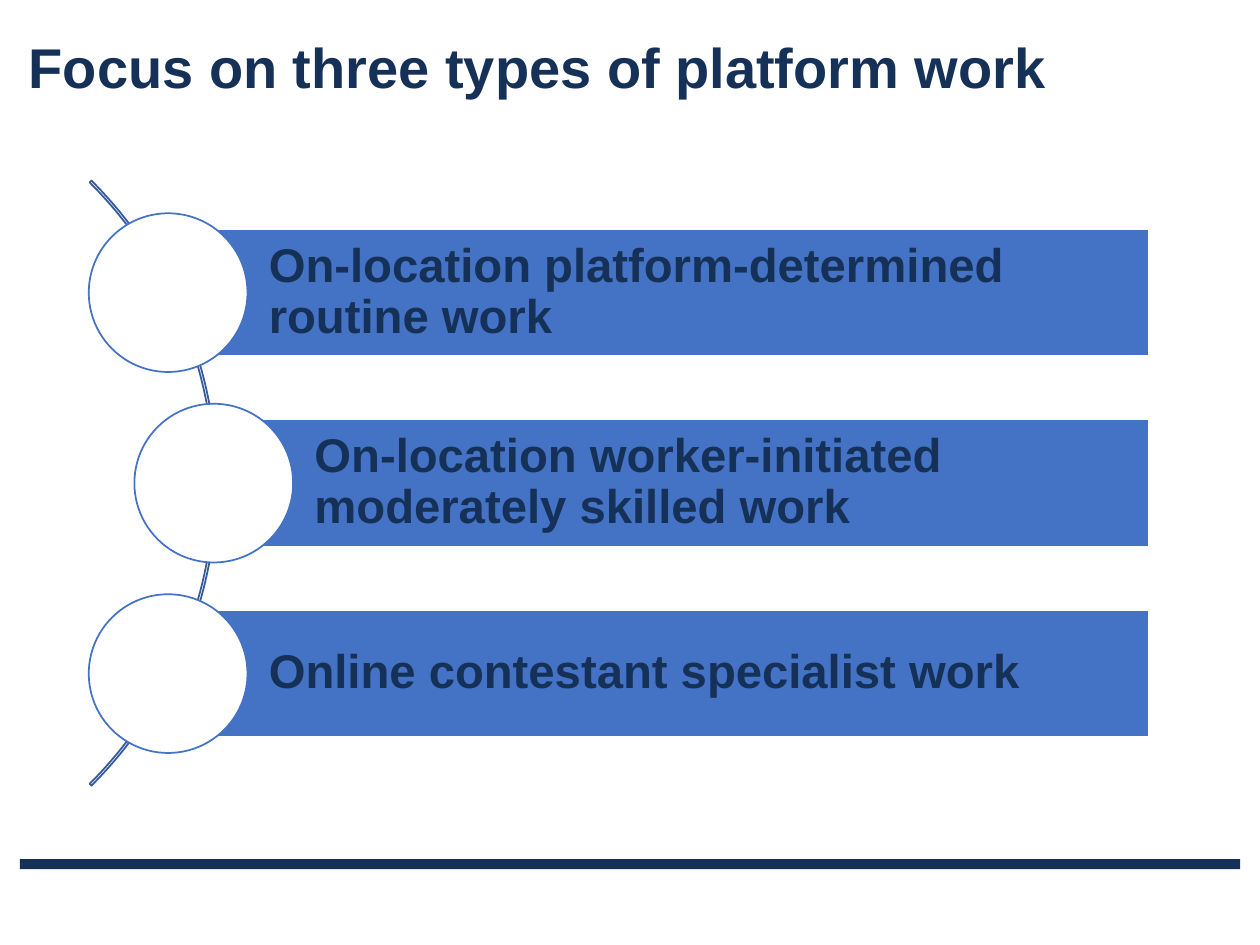
import pptx
import pptx.util
import pptx.dml.color
import pptx.enum.shapes
import pptx.enum.text

Cm = pptx.util.Cm
Pt = pptx.util.Pt
SHAPE = pptx.enum.shapes.MSO_SHAPE
ANCHOR = pptx.enum.text.MSO_ANCHOR

TITLE = "Focus on three types of platform work"
WORK_TYPES = [
    ("On-location platform-determined routine work", 3.39),
    ("On-location worker-initiated moderately skilled work", 4.31),
    ("Online contestant specialist work", 3.39),
]
COLORS = {"navy": "163157", "blue": "4472C4", "arc": "365B9D", "white": "FFFFFF"}

MIDDLE_Y, PITCH = 9.74, 3.84
BAR_RIGHT, BAR_HEIGHT = 23.17, 2.56
CIRCLE = 3.2
ARC_LEFT, ARC_SIZE = -12.88, 17.25


def rgb(name):
    return pptx.dml.color.RGBColor.from_string(COLORS[name])


def add_shape(kind, left, top, width, height, fill=None, line=None):
    sp = slide.shapes.add_shape(kind, Cm(left), Cm(top), Cm(width), Cm(height))
    sp.shadow.inherit = False
    if fill:
        sp.fill.solid()
        sp.fill.fore_color.rgb = rgb(fill)
    else:
        sp.fill.background()
    if line:
        sp.line.color.rgb = rgb(line)
        sp.line.width = Pt(1)
    else:
        sp.line.fill.background()
    return sp


def write(sp, text, size, anchor=ANCHOR.TOP, margins=(0.25, 0.13, 0.25, 0.13), spacing=None):
    tf = sp.text_frame
    tf.word_wrap = True
    tf.vertical_anchor = anchor
    tf.margin_left, tf.margin_top, tf.margin_right, tf.margin_bottom = map(Cm, margins)
    p = tf.paragraphs[0]
    p.alignment = pptx.enum.text.PP_ALIGN.LEFT
    p.line_spacing = spacing
    r = p.add_run()
    r.text = text
    r.font.name = "Arial"
    r.font.size = Pt(size)
    r.font.bold = True
    r.font.color.rgb = rgb("navy")


prs = pptx.Presentation()
prs.slide_width, prs.slide_height = Cm(25.4), Cm(19.05)
slide = prs.slides.add_slide(prs.slide_layouts[6])

add_shape(SHAPE.RECTANGLE, 0.4, 17.32, 24.6, 0.2, fill="navy")
title = slide.shapes.add_textbox(Cm(0.33), Cm(0.53), Cm(24.6), Cm(1.62))
write(title, TITLE, 32)

arc = add_shape(SHAPE.BLOCK_ARC, ARC_LEFT, MIDDLE_Y - ARC_SIZE / 2, ARC_SIZE, ARC_SIZE, line="arc")
for i, value in enumerate((189, 27, 0.003)):
    arc.adjustments[i] = value

for i, (text, x) in enumerate(WORK_TYPES):
    y = MIDDLE_Y + (i - 1) * PITCH
    bar = add_shape(SHAPE.RECTANGLE, x, y - BAR_HEIGHT / 2, BAR_RIGHT - x, BAR_HEIGHT,
                    fill="blue", line="white")
    write(bar, text, 27, anchor=ANCHOR.MIDDLE, margins=(2.03, 0.18, 0.18, 0.18), spacing=0.9)
    add_shape(SHAPE.OVAL, x - CIRCLE / 2, y - CIRCLE / 2, CIRCLE, CIRCLE, fill="white", line="blue")

prs.save("out.pptx")
